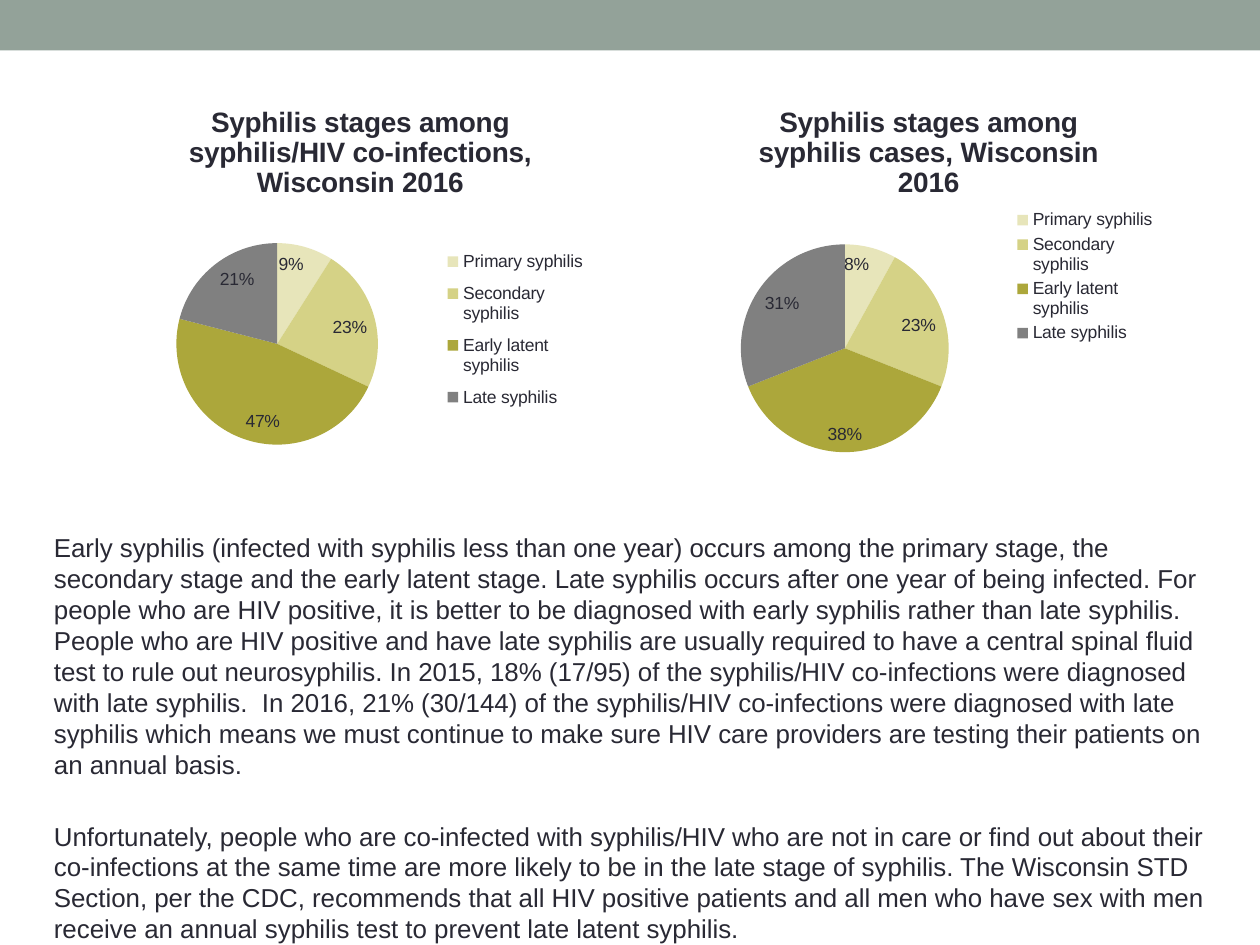
import pptx
import pptx.chart.data
import pptx.dml.color
import pptx.enum.chart
import pptx.enum.shapes
import pptx.oxml
import pptx.oxml.ns
import pptx.util
from pptx.util import Inches, Pt

RGBColor = pptx.dml.color.RGBColor
INK = RGBColor(0x29, 0x29, 0x34)
BAND = RGBColor(0x93, 0xA2, 0x99)
STAGES = [
    ("Primary syphilis", RGBColor(0xE7, 0xE5, 0xBA)),
    ("Secondary syphilis", RGBColor(0xD5, 0xD2, 0x86)),
    ("Early latent syphilis", RGBColor(0xAC, 0xA7, 0x3B)),
    ("Late syphilis", RGBColor(0x80, 0x80, 0x80)),
]
# Boxes are left, top, width, height in inches on the slide.
PIES = [
    {"title": "Syphilis stages among syphilis/HIV co-infections, Wisconsin 2016",
     "shares": (9, 23, 47, 21), "frame": (0.75, 0.67, 4.22, 3.01),
     "pie": (1.4, 1.93, 1.6, 1.6), "legend": (3.47, 1.9, 1.24, 1.43)},
    {"title": "Syphilis stages among syphilis cases, Wisconsin 2016",
     "shares": (8, 23, 38, 31), "frame": (5.42, 0.67, 3.9, 3.06),
     "pie": (5.88, 1.94, 1.65, 1.65), "legend": (7.99, 1.63, 1.24, 1.13)},
]
PARAGRAPHS = [
    "Early syphilis (infected with syphilis less than one year) occurs among the "
    "primary stage, the secondary stage and the early latent stage. Late syphilis "
    "occurs after one year of being infected. For people who are HIV positive, it is "
    "better to be diagnosed with early syphilis rather than late syphilis. People who "
    "are HIV positive and have late syphilis are usually required to have a central "
    "spinal fluid test to rule out neurosyphilis. In 2015, 18% (17/95) of the "
    "syphilis/HIV co-infections were diagnosed with late syphilis.  In 2016, 21% "
    "(30/144) of the syphilis/HIV co-infections were diagnosed with late syphilis "
    "which means we must continue to make sure HIV care providers are testing their "
    "patients on an annual basis.",
    "Unfortunately, people who are co-infected with syphilis/HIV who are not in care "
    "or find out about their co-infections at the same time are more likely to be in "
    "the late stage of syphilis. The Wisconsin STD Section, per the CDC, recommends "
    "that all HIV positive patients and all men who have sex with men receive an "
    "annual syphilis test to prevent late latent syphilis.",
]


def style_font(font, size, bold=False):
    font.name, font.size, font.bold = "Arial", Pt(size), bold
    font.color.rgb = INK


def write_text(paragraph, text, size, bold=False, line=None, before=0):
    run = paragraph.add_run()
    run.text = text
    style_font(run.font, size, bold)
    paragraph.space_before = Pt(before)
    if line:
        paragraph.line_spacing = Pt(line)


def place_in_chart(element, position, box, frame, inner=False):
    """Give a chart part a manual layout, as fractions of the chart frame."""
    for old in element.findall(pptx.oxml.ns.qn("c:layout")):
        element.remove(old)
    fractions = ((box[0] - frame[0]) / frame[2], (box[1] - frame[1]) / frame[3],
                 box[2] / frame[2], box[3] / frame[3])
    target = '<c:layoutTarget val="inner"/>' if inner else ""
    modes = '<c:xMode val="edge"/><c:yMode val="edge"/>'
    sizes = "".join(f'<c:{key} val="{value:.4f}"/>' for key, value in zip("xywh", fractions))
    element.insert(position, pptx.oxml.parse_xml(
        f'<c:layout {pptx.oxml.ns.nsdecls("c")}><c:manualLayout>'
        f'{target}{modes}{sizes}</c:manualLayout></c:layout>'))


def add_pie(slide, title, shares, frame, pie, legend):
    data = pptx.chart.data.CategoryChartData()
    data.categories = [stage for stage, _ in STAGES]
    data.add_series("Series 1", shares)
    chart = slide.shapes.add_chart(pptx.enum.chart.XL_CHART_TYPE.PIE,
                                   *map(Inches, frame), data).chart
    style_font(chart.font, 10)

    chart.has_title = True
    write_text(chart.chart_title.text_frame.paragraphs[0], title, 16, bold=True)

    chart.has_legend = True
    chart.legend.position = pptx.enum.chart.XL_LEGEND_POSITION.RIGHT
    chart.legend.include_in_layout = False
    style_font(chart.legend.font, 10)

    plot = chart.plots[0]
    plot.vary_by_categories = True
    for index, (_, color) in enumerate(STAGES):
        wedge = plot.series[0].points[index].format
        wedge.fill.solid()
        wedge.fill.fore_color.rgb = color
        wedge.line.fill.background()

    plot.has_data_labels = True
    labels = plot.data_labels
    labels.show_percentage, labels.show_value = True, False
    labels.number_format, labels.number_format_is_linked = "0%", False
    labels.position = pptx.enum.chart.XL_LABEL_POSITION.INSIDE_END
    style_font(labels.font, 10)

    chart_space = chart.element
    place_in_chart(chart_space.find(".//" + pptx.oxml.ns.qn("c:plotArea")), 0,
                   pie, frame, inner=True)
    place_in_chart(chart_space.find(".//" + pptx.oxml.ns.qn("c:legend")), 1, legend, frame)


def main():
    deck = pptx.Presentation()
    deck.slide_width, deck.slide_height = Inches(10), Inches(7.5)
    slide = deck.slides.add_slide(deck.slide_layouts[6])

    band = slide.shapes.add_shape(pptx.enum.shapes.MSO_SHAPE.RECTANGLE,
                                  0, 0, Inches(10), Inches(0.4))
    band.shadow.inherit = False
    band.fill.solid()
    band.fill.fore_color.rgb = BAND
    band.line.fill.background()

    body = slide.shapes.add_textbox(Inches(0.33), Inches(4.17),
                                    Inches(9.33), Inches(2.92)).text_frame
    body.word_wrap = True
    for index, text in enumerate(PARAGRAPHS):
        paragraph = body.add_paragraph() if index else body.paragraphs[0]
        write_text(paragraph, text, 14.8, line=17.7, before=23.4 if index else 0)

    for pie in PIES:
        add_pie(slide, **pie)
    deck.save("out.pptx")


if __name__ == "__main__":
    main()
